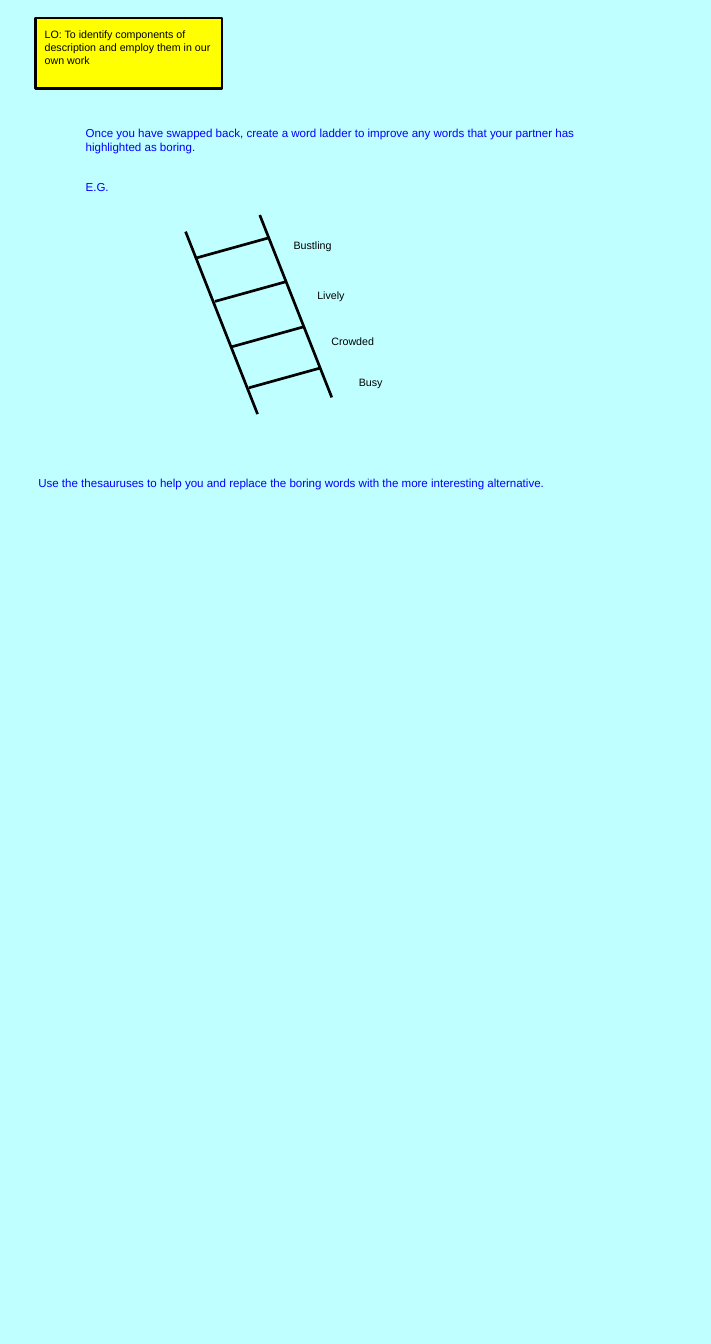
import pptx
import pptx.dml.color
import pptx.enum.shapes
import pptx.util
from pptx.oxml.ns import qn

Pt = pptx.util.Pt
PAGE_SIZE = (800, 1512)
BACKGROUND, BLACK, BLUE, YELLOW = "C0FFFF", "000000", "0000FF", "FFFF00"

OBJECTIVE = "LO: To identify components of description and employ them in our own work"
TASK = [
    "Once you have swapped back, create a word ladder to improve any words "
    "that your partner has highlighted as boring.",
    "E.G.",
]
REMINDER = ("Use the thesauruses to help you and replace the boring words "
            "with the more interesting alternative.")

OBJECTIVE_FRAME = (39.6, 20.2, 210.2, 79.2)

# Text, position and size, font size, colour
TEXTS = [
    ([OBJECTIVE], (43.2, 28.1, 216, 51.1), 12, BLACK),
    (TASK, (89.3, 138.2, 583.9, 85.7), 13, BLUE),
    ([REMINDER], (36, 531.4, 771.8, 23), 13, BLUE),
]
PARAGRAPH_GAP = 30

RAIL_STARTS = [(208.8, 260.6), (292.3, 241.9)]
RAIL_SPAN = (81, 205.2)
RUNG_SPAN = (80.3, -22.3)
# Word, left end of its rung, top left of its label, label width
RUNGS = [
    ("Bustling", (221, 290.2), (323.3, 265.7), 82),
    ("Lively", (241.9, 339.1), (349.9, 321.1), 66),
    ("Crowded", (260.6, 390.2), (365.8, 373), 90),
    ("Busy", (280.1, 436.3), (396.7, 419.8), 60),
]
LABEL_HEIGHT = 21.6


def colour(value):
    return pptx.dml.color.RGBColor.from_string(value)


def style_line(line):
    line.color.rgb = colour(BLACK)
    line.width = Pt(3)


def add_text(page, paragraphs, frame, size, text_colour):
    box = page.shapes.add_textbox(*map(Pt, frame))
    box.text_frame.word_wrap = True
    box.text_frame.text = "\n".join(paragraphs)
    for index, para in enumerate(box.text_frame.paragraphs):
        if index:
            para.space_before = Pt(PARAGRAPH_GAP)
        for span in para.runs:
            span.font.name = "Arial"
            span.font.size = Pt(size)
            span.font.color.rgb = colour(text_colour)


def add_bar(page, start, extent):
    """Draw one straight piece of the ladder."""
    (x, y), (across, down) = start, extent
    bar = page.shapes.add_connector(
        pptx.enum.shapes.MSO_CONNECTOR.STRAIGHT,
        Pt(x), Pt(y), Pt(x + across), Pt(y + down))
    style_line(bar.line)
    properties = bar._element.spPr
    properties.append(properties.makeelement(qn("a:effectLst"), {}))


def main():
    deck = pptx.Presentation()
    deck.slide_width, deck.slide_height = map(Pt, PAGE_SIZE)
    page = deck.slides.add_slide(deck.slide_layouts[6])
    page.background.fill.solid()
    page.background.fill.fore_color.rgb = colour(BACKGROUND)

    panel = page.shapes.add_shape(
        pptx.enum.shapes.MSO_SHAPE.RECTANGLE, *map(Pt, OBJECTIVE_FRAME))
    panel.shadow.inherit = False
    panel.fill.solid()
    panel.fill.fore_color.rgb = colour(YELLOW)
    style_line(panel.line)

    for text in TEXTS:
        add_text(page, *text)
    for start in RAIL_STARTS:
        add_bar(page, start, RAIL_SPAN)
    for word, start, corner, width in RUNGS:
        add_bar(page, start, RUNG_SPAN)
        add_text(page, [word], (*corner, width, LABEL_HEIGHT), 12, BLACK)

    deck.save("out.pptx")


if __name__ == "__main__":
    main()
